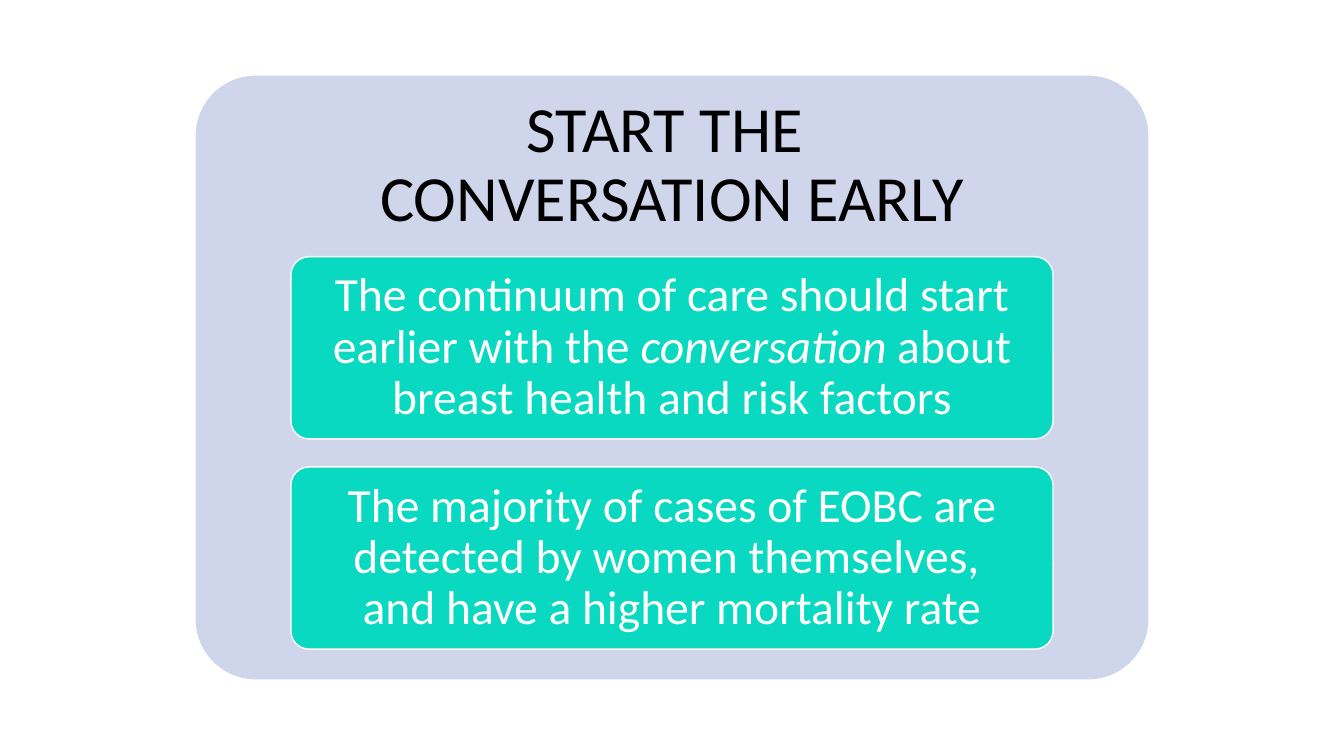
from pptx import Presentation
from pptx import util as u
from pptx.dml import color
from pptx.enum import shapes, text

COLOURS = {"panel": "CFD5EA", "card": "09D9C0", "light": "FFFFFF", "dark": "000000"}
FONT = "Calibri"
HEADING = [[("START THE ", False)], [("CONVERSATION EARLY", False)]]
CARDS = [
    [
        [
            ("The continuum of care should start earlier with the ", False),
            ("conversation", True),
            (" about", False),
        ],
        [(" breast health and risk factors ", False)],
    ],
    [
        [("The majority of cases of EOBC are detected by women themselves, ", False)],
        [("and have a higher mortality rate", False)],
    ],
]


def rgb(name):
    return color.RGBColor.from_string(COLOURS[name])


def write(shape, paragraphs, size, colour, inset_x, inset_y):
    frame = shape.text_frame
    frame.word_wrap = True
    frame.auto_size = text.MSO_AUTO_SIZE.NONE
    frame.vertical_anchor = text.MSO_ANCHOR.MIDDLE
    frame.margin_left = frame.margin_right = u.Inches(inset_x)
    frame.margin_top = frame.margin_bottom = u.Inches(inset_y)
    for index, runs in enumerate(paragraphs):
        paragraph = frame.add_paragraph() if index else frame.paragraphs[0]
        paragraph.alignment = text.PP_ALIGN.CENTER
        paragraph.line_spacing = 0.9
        for words, italic in runs:
            run = paragraph.add_run()
            run.text = words
            run.font.name = FONT
            run.font.size = u.Pt(size)
            run.font.italic = italic
            run.font.color.rgb = rgb(colour)


def add_rounded(slide, box, fill, line=None):
    shape = slide.shapes.add_shape(
        shapes.MSO_SHAPE.ROUNDED_RECTANGLE, *(u.Inches(length) for length in box)
    )
    shape.adjustments[0] = 0.1
    shape.shadow.inherit = False
    shape.fill.solid()
    shape.fill.fore_color.rgb = rgb(fill)
    if line:
        shape.line.color.rgb = rgb(line)
        shape.line.width = u.Pt(1)
    else:
        shape.line.fill.background()
    return shape


def add_heading(slide, box):
    title = slide.shapes.title
    title.left, title.top, title.width, title.height = (u.Inches(length) for length in box)
    slide.shapes._spTree.append(title._element)
    write(title, HEADING, 46, "dark", 0.19, 0.19)


def add_cards(slide, box):
    left, top, width, height = box
    gap_share = 2 / 13
    card_height = height / (len(CARDS) + gap_share * (len(CARDS) - 1))
    for index, paragraphs in enumerate(CARDS):
        card_top = top + index * card_height * (1 + gap_share)
        card = add_rounded(slide, (left, card_top, width, card_height), "card", "light")
        write(card, paragraphs, 34, "light", 0.09, 0.07)


def add_panel(slide, box):
    left, top, width, height = box
    add_rounded(slide, box, "panel")
    add_heading(slide, (left, top, width, 0.3 * height))
    add_cards(slide, (left + 0.1 * width, top + 0.3 * height, 0.8 * width, 0.65 * height))


def main():
    presentation = Presentation()
    presentation.slide_width = u.Inches(13.33)
    presentation.slide_height = u.Inches(7.5)
    slide = presentation.slides.add_slide(presentation.slide_layouts[5])
    add_panel(slide, (1.94, 0.75, 9.45, 5.99))
    presentation.save("out.pptx")


if __name__ == "__main__":
    main()
